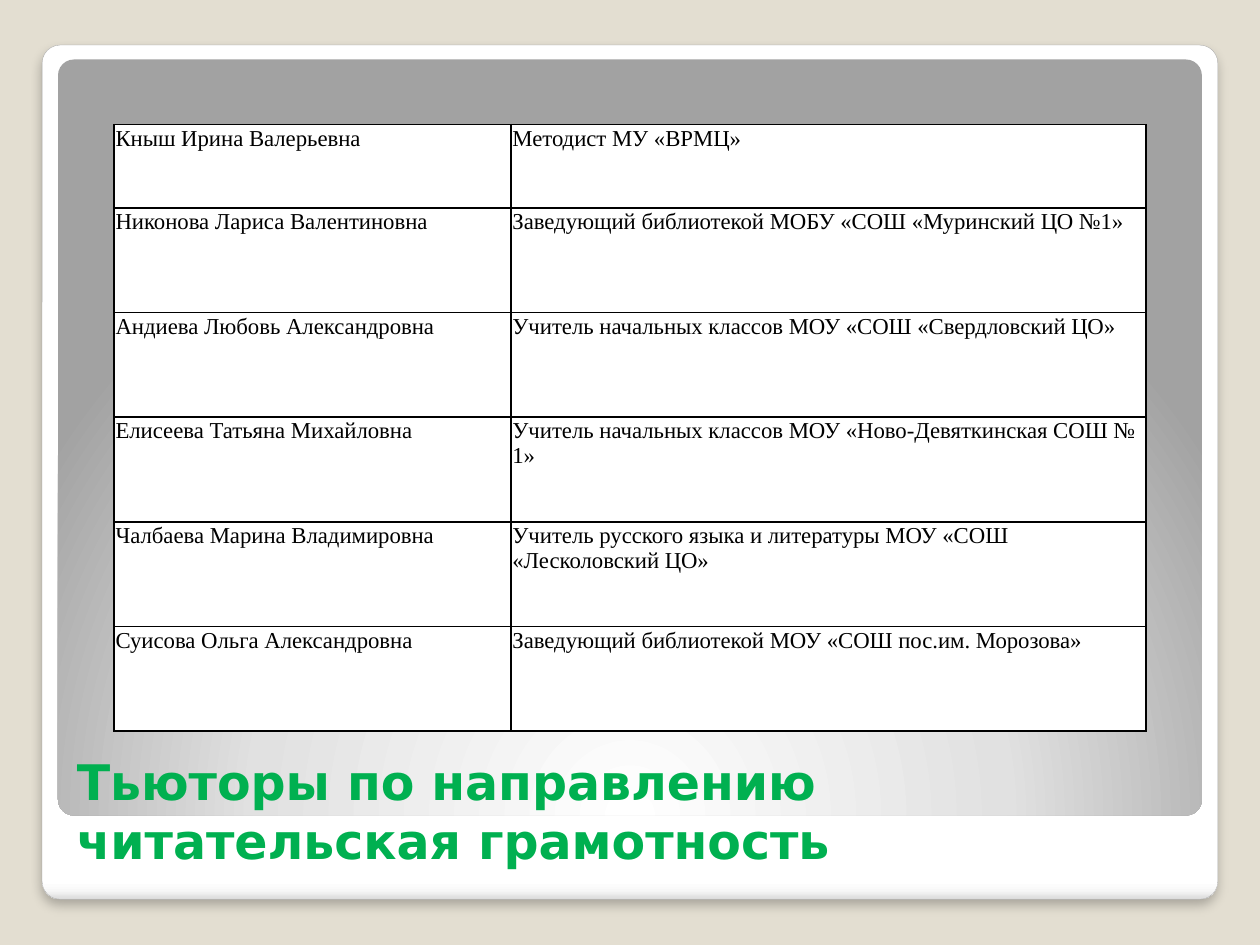
from pptx import Presentation
from pptx import oxml
from pptx import util as u
from pptx.dml.color import RGBColor
from pptx.enum import shapes, text

NS = 'xmlns:a="http://schemas.openxmlformats.org/drawingml/2006/main"'


def color(value):
    return RGBColor.from_string(value)


def add_panel(box, stops, direction):
    panel = slide.shapes.add_shape(
        shapes.MSO_SHAPE.ROUNDED_RECTANGLE, *[u.Cm(v) for v in box])
    panel.adjustments[0] = 0.021
    panel.shadow.inherit = False
    panel.line.fill.background()
    stop_xml = "".join(
        f'<a:gs pos="{position * 1000}"><a:srgbClr val="{value}"/></a:gs>'
        for position, value in stops)
    panel._element.spPr.insert(2, oxml.parse_xml(
        f'<a:gradFill {NS} rotWithShape="1"><a:gsLst>{stop_xml}</a:gsLst>{direction}</a:gradFill>'))
    return panel


presentation = Presentation()
presentation.slide_width = u.Cm(25.4)
presentation.slide_height = u.Cm(19.05)
slide = presentation.slides.add_slide(presentation.slide_layouts[6])
slide.background.fill.solid()
slide.background.fill.fore_color.rgb = color("E3DED1")

card = add_panel(
    (0.85, 0.91, 23.7, 17.22),
    [(0, "FFFFFF"), (98, "FFFFFF"), (99, "F7F7F7"), (100, "DADADA")],
    '<a:lin ang="5400000" scaled="0"/>')
card.line.color.rgb = color("A4A4A4")
card.line.width = u.Pt(0.16)
card._element.spPr.find(oxml.ns.qn("a:effectLst")).append(oxml.parse_xml(
    f'<a:outerShdw {NS} blurRad="{u.Pt(6)}" dist="{u.Pt(4)}" dir="5400000" algn="ctr" rotWithShape="0">'
    '<a:srgbClr val="000000"><a:alpha val="25000"/></a:srgbClr></a:outerShdw>'))

add_panel(
    (1.17, 1.2, 23.06, 15.24),
    [(0, "FFFFFF"), (55, "E1E1E1"), (100, "A2A2A2")],
    '<a:path path="circle"><a:fillToRect l="50000" t="175000" r="50000" b="-75000"/></a:path>')

title = slide.shapes.add_textbox(u.Cm(1.3), u.Cm(14.73), u.Cm(22.73), u.Cm(2.92))
title.text_frame.word_wrap = True
title.text_frame.vertical_anchor = text.MSO_ANCHOR.BOTTOM
title.text_frame.text = "Тьюторы по направлению читательская грамотность"
title_font = title.text_frame.paragraphs[0].runs[0].font
title_font.name = "DejaVu Sans"
title_font.size = u.Pt(28)
title_font.bold = True
title_font.color.rgb = color("00B050")

tutors = [
    ("Кныш Ирина Валерьевна", "Методист МУ «ВРМЦ»"),
    ("Никонова Лариса Валентиновна", "Заведующий библиотекой МОБУ «СОШ «Муринский ЦО №1»"),
    ("Андиева Любовь Александровна", "Учитель начальных классов МОУ «СОШ «Свердловский ЦО»"),
    ("Елисеева Татьяна Михайловна", "Учитель начальных классов МОУ «Ново-Девяткинская СОШ № 1»"),
    ("Чалбаева Марина Владимировна", "Учитель русского языка и литературы МОУ «СОШ «Лесколовский ЦО»"),
    ("Суисова Ольга Александровна", "Заведующий библиотекой МОУ «СОШ пос.им. Морозова»"),
]
table = slide.shapes.add_table(
    len(tutors), 2, u.Cm(2.3), u.Cm(2.51), u.Cm(20.8), u.Cm(12.23)).table
table.first_row = False
table.horz_banding = False
table.columns[0].width = u.Cm(8)
table.columns[1].width = u.Cm(12.8)

for row_index, tutor in enumerate(tutors):
    table.rows[row_index].height = u.Cm(2.11 if row_index else 1.68)
    for column_index, words in enumerate(tutor):
        cell = table.cell(row_index, column_index)
        cell.margin_left = cell.margin_right = u.Cm(0.03)
        cell.margin_top = cell.margin_bottom = u.Cm(0.03)
        cell.fill.solid()
        cell.fill.fore_color.rgb = color("FFFFFF")
        cell.text_frame.text = words
        font = cell.text_frame.paragraphs[0].runs[0].font
        font.name = "Times New Roman"
        font.size = u.Pt(13)
        font.color.rgb = color("000000")
        for position, side in enumerate(("lnL", "lnR", "lnT", "lnB")):
            cell._tc.get_or_add_tcPr().insert(position, oxml.parse_xml(
                f'<a:{side} {NS} w="{u.Pt(1)}"><a:solidFill>'
                f'<a:srgbClr val="000000"/></a:solidFill></a:{side}>'))

presentation.save("out.pptx")
